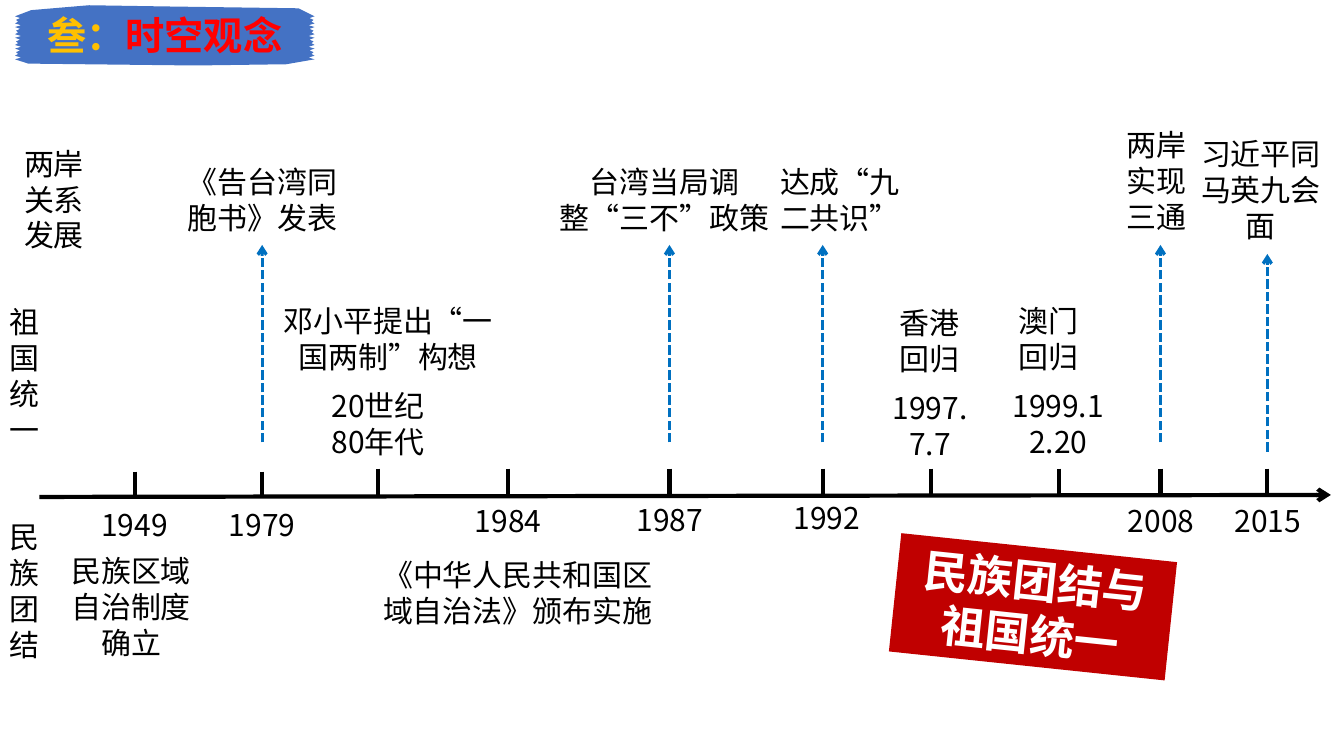
import dataclasses
import itertools

import lxml.etree
import pptx
import pptx.dml.color
import pptx.enum.dml
import pptx.enum.shapes
import pptx.enum.text
import pptx.oxml.ns
import pptx.util

Inches = pptx.util.Inches
Align = pptx.enum.text.PP_ALIGN


@dataclasses.dataclass(frozen=True)
class Theme:
    """Colours, font and type sizes of the slide."""
    font: str = "Noto Sans CJK SC"
    ink: str = "000000"
    arrow: str = "0070C0"
    brush: str = "4472C4"
    badge: str = "C00000"
    white: str = "FFFFFF"
    gold: str = "FFC000"
    red: str = "FF0000"
    label_size: float = 21.4
    title_size: float = 28
    badge_size: float = 32
    leading: float = 1.2
    axis_width: float = 3
    arrow_width: float = 2.25


@dataclasses.dataclass(frozen=True)
class Label:
    """A text with its place in inches and its number of lines."""
    text: str
    left: float
    top: float
    width: float
    lines: int = 1

    @property
    def height(self):
        """Height of the lines and the box margins."""
        return 0.1 + 0.36 * self.lines


THEME = Theme()
BRISTLE_DEPTHS = (0.02, 0.07, 0.03, 0.05, 0.02, 0.08)
BRISTLE_COUNT = 24
ARROW_LENGTH = 1.96
TICKS_BY_LENGTH = {
    0.23: (1.34, 2.6),
    0.26: (3.75, 5.04, 6.64, 8.16, 9.23, 10.5, 11.51, 12.57),
}
ROW_LABELS = {
    Label("两岸关系发展", 0, 1.39, 1.07, 3): Align.CENTER,
    Label("祖国统一", 0, 2.96, 0.7, 4): Align.LEFT,
    Label("民族团结", 0, 5.1, 0.56, 4): Align.LEFT,
}
DATES = [
    Label("1949", 0.83, 4.98, 1.01),
    Label("1979", 1.92, 4.98, 1.36),
    Label("20世纪\n80年代", 2.94, 3.8, 1.62, 2),
    Label("1984", 4.43, 4.94, 1.22),
    Label("1987", 6.14, 4.93, 1.01),
    Label("1992", 7.52, 4.91, 1.36),
    Label("1997.7.7", 8.7, 3.82, 1.05, 2),
    Label("1999.12.20", 9.92, 3.8, 1.15, 2),
    Label("2008", 10.99, 4.94, 1.05),
    Label("2015", 12.04, 4.94, 1.07),
]
HOME_EVENTS = [
    Label("邓小平提出“一国两制”构想", 2.6, 2.95, 2.5, 2),
    Label("香港回归", 8.74, 2.97, 0.96, 2),
    Label("澳门回归", 9.92, 2.95, 0.96, 2),
    Label("民族区域自治制度确立", 0.47, 5.43, 1.66, 3),
    Label("《中华人民共和国区域自治法》颁布实施", 3.6, 5.47, 3.07, 2),
]
STRAIT_EVENTS_BY_YEAR_X = {
    2.6: Label("《告台湾同胞书》发表", 1.62, 1.57, 1.97, 2),
    6.64: Label("台湾当局调整“三不”政策", 5.43, 1.57, 2.32, 2),
    8.16: Label("达成“九二共识”", 7.55, 1.57, 1.56, 2),
    11.51: Label("两岸实现三通", 10.99, 1.21, 0.96, 3),
    12.57: Label("习近平同马英九会面", 11.68, 1.3, 1.65, 3),
}


def rgb(value):
    """Turn a hex string into a colour."""
    return pptx.dml.color.RGBColor.from_string(value)


def paint(shape, color):
    """Give a shape a plain fill without line or shadow."""
    shape.shadow.inherit = False
    shape.fill.solid()
    shape.fill.fore_color.rgb = rgb(color)
    shape.line.fill.background()


def style_paragraph(para, size, color=None, bold=False, align=Align.CENTER):
    """Give a paragraph its alignment and its Latin and East Asian font."""
    para.alignment = align
    para.font.name = THEME.font
    para.font.size = pptx.util.Pt(size)
    para.font.bold = bold
    if color:
        para.font.color.rgb = rgb(color)
    latin = next(para._p.iter(pptx.oxml.ns.qn("a:latin")))
    latin.addnext(lxml.etree.Element(pptx.oxml.ns.qn("a:ea"), typeface=THEME.font))


def fill_text(shape, text, size, color, bold=False, align=Align.CENTER):
    """Write wrapped text with even line pitch into a shape."""
    frame = shape.text_frame
    frame.word_wrap = True
    frame.auto_size = pptx.enum.text.MSO_AUTO_SIZE.SHAPE_TO_FIT_TEXT
    frame.text = text
    for para in frame.paragraphs:
        para.line_spacing = pptx.util.Pt(size * THEME.leading)
        style_paragraph(para, size, color, bold, align)


def add_label(page, label, align=Align.CENTER):
    """Add a label as a text box."""
    box = page.shapes.add_textbox(Inches(label.left), Inches(label.top),
                                  Inches(label.width), Inches(label.height))
    fill_text(box, label.text, THEME.label_size, THEME.ink, align=align)


def add_line(page, start, end, color, width, arrow=False, dashed=False):
    """Draw a straight line, optionally dashed or with an arrowhead."""
    ends = [Inches(value) for value in (*start, *end)]
    line = page.shapes.add_connector(pptx.enum.shapes.MSO_CONNECTOR.STRAIGHT, *ends)
    line.line.color.rgb = rgb(color)
    line.line.width = pptx.util.Pt(width)
    if dashed:
        line.line.dash_style = pptx.enum.dml.MSO_LINE.SQUARE_DOT
    properties = line._element.spPr
    if arrow:
        outline = properties.find(pptx.oxml.ns.qn("a:ln"))
        lxml.etree.SubElement(outline, pptx.oxml.ns.qn("a:tailEnd"), type="arrow")
    lxml.etree.SubElement(properties, pptx.oxml.ns.qn("a:effectLst"))


def brush_outline(width, height):
    """Trace a stroke with smooth long edges and bristles at both ends."""
    bristles = [(depth, height * (0.2 + 0.7 * step / BRISTLE_COUNT)) for step, depth
                in zip(range(BRISTLE_COUNT + 1), itertools.cycle(BRISTLE_DEPTHS))]
    left_end = [(depth, y) for depth, y in bristles]
    bottom = [(width * 0.05, height * 0.97), (width * 0.6, height), (width * 0.9, height * 0.98)]
    right_end = [(width - depth, y) for depth, y in reversed(bristles)]
    top = [(width * 0.94, height * 0.07), (width * 0.5, height * 0.04),
           (width * 0.25, height * 0.02), (width * 0.06, height * 0.1)]
    return [(Inches(x), Inches(y)) for x, y in left_end + bottom + right_end + top]


def add_heading(page, left, top, width, height):
    """Paint the brush stroke and set the slide title on it."""
    start, *others = brush_outline(width, height)
    builder = page.shapes.build_freeform(*start)
    builder.add_line_segments(others, close=True)
    brush = builder.convert_to_shape(Inches(left), Inches(top))
    paint(brush, THEME.brush)

    title = page.shapes.title
    title.left, title.top = Inches(left), Inches(top)
    title.width, title.height = Inches(width), Inches(height)
    brush._element.addnext(title._element)
    frame = title.text_frame
    frame.word_wrap = True
    frame.auto_size = pptx.enum.text.MSO_AUTO_SIZE.NONE
    frame.vertical_anchor = pptx.enum.text.MSO_ANCHOR.MIDDLE
    para = frame.paragraphs[0]
    style_paragraph(para, THEME.title_size, bold=True)
    for text, color in (("叁：", THEME.gold), ("时空观念", THEME.red)):
        span = para.add_run()
        span.text = text
        span.font.color.rgb = rgb(color)


def add_timeline(page, left, top, width):
    """Draw the time axis with its ticks and dates."""
    add_line(page, (left, top + 0.02), (left + width, top), THEME.ink, THEME.axis_width, arrow=True)
    for length, positions in TICKS_BY_LENGTH.items():
        for x in positions:
            add_line(page, (x, top - length), (x, top), THEME.ink, THEME.axis_width)
    for label in DATES:
        add_label(page, label)


def add_events(page):
    """Place the row names, the events and the arrows to the upper row."""
    for label, align in ROW_LABELS.items():
        add_label(page, label, align)
    for label in HOME_EVENTS:
        add_label(page, label)
    for x, label in STRAIT_EVENTS_BY_YEAR_X.items():
        add_label(page, label)
        tip = label.top + label.height + 0.04
        add_line(page, (x, tip + ARROW_LENGTH), (x, tip), THEME.arrow, THEME.arrow_width, True, True)


def add_badge(page, left, top, width, height):
    """Add the tilted red theme badge."""
    badge = page.shapes.add_shape(pptx.enum.shapes.MSO_SHAPE.RECTANGLE, Inches(left),
                                  Inches(top), Inches(width), Inches(height))
    badge.rotation = 6
    paint(badge, THEME.badge)
    fill_text(badge, "民族团结与祖国统一", THEME.badge_size, THEME.white, bold=True)


def main():
    """Build the slide and save it."""
    deck = pptx.Presentation()
    deck.slide_width, deck.slide_height = Inches(13.33), Inches(7.5)
    page = deck.slides.add_slide(deck.slide_layouts[5])
    add_timeline(page, 0.39, 4.91, 12.81)
    add_events(page)
    add_badge(page, 8.87, 5.43, 2.75, 1.18)
    add_heading(page, 0.13, 0.04, 3.01, 0.61)
    deck.save("out.pptx")


if __name__ == "__main__":
    main()
